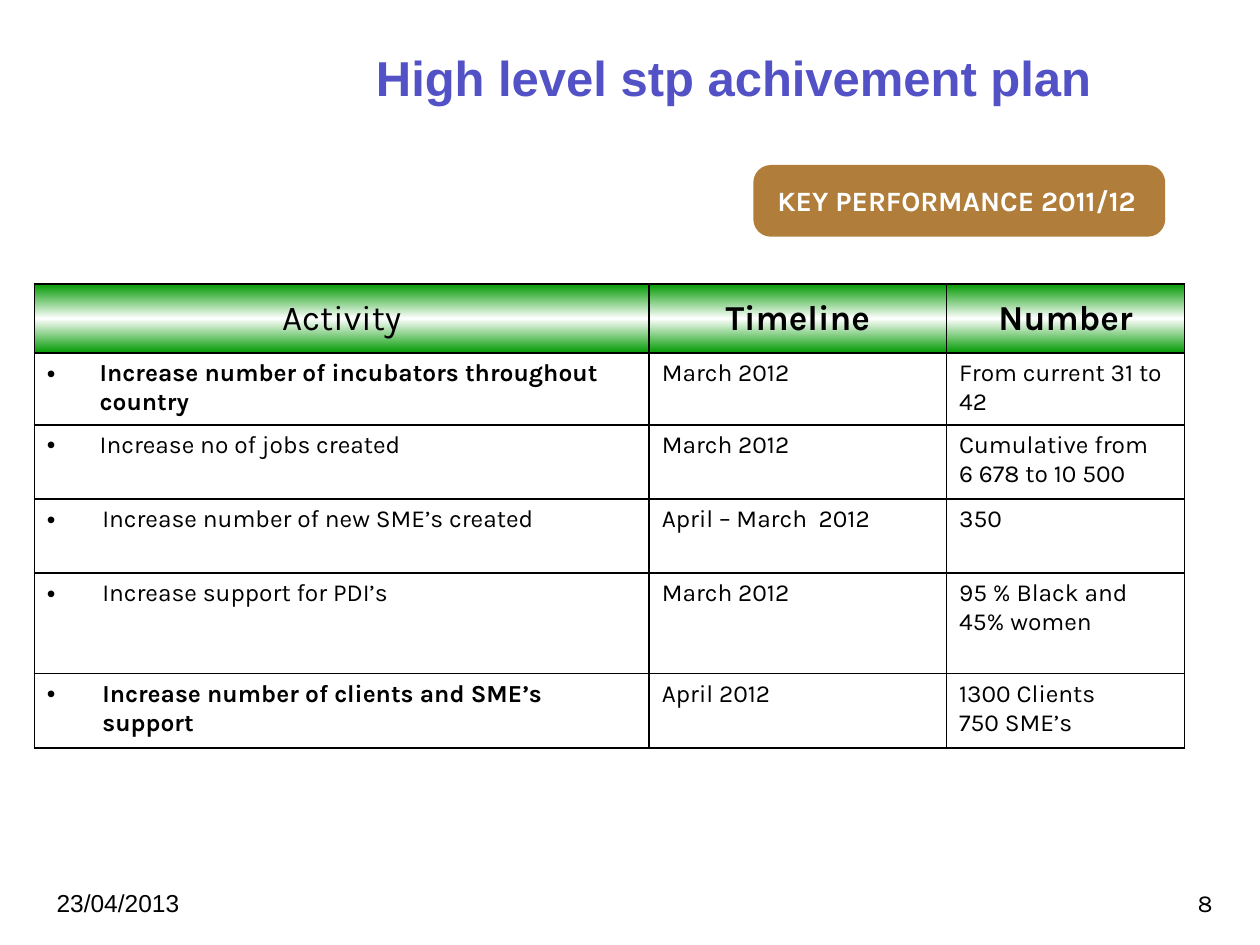
from copy import deepcopy
from pptx import Presentation
from pptx.dml import color
from pptx.enum import shapes, text
from pptx.oxml import parse_xml
from pptx.oxml.ns import nsdecls, qn
from pptx.util import Pt

LEFT, MID, RIGHT = text.PP_ALIGN.LEFT, text.PP_ALIGN.CENTER, text.PP_ALIGN.RIGHT
TOP, CENTRE = text.MSO_ANCHOR.TOP, text.MSO_ANCHOR.MIDDLE

HEADS = ["Activity", "Timeline", "Number"]
ROWS = [
    ("Increase number of incubators throughout country", "March 2012",
     "From current 31 to 42"),
    ("Increase no of jobs created", "March 2012",
     "Cumulative from\v6 678 to 10 500"),
    ("Increase number of new SME’s created", "April – March  2012", "350"),
    ("Increase support for PDI’s", "March 2012",
     "95 % Black and\n45% women"),
    ("Increase number of clients and SME’s support", "April 2012",
     "1300 Clients\n750 SME’s"),
]
KEY = (0, 4)  # rows whose activity is bold
WIDTHS = [351.4, 169.9, 136.1]
HEIGHTS = [39.6, 41, 42.3, 42.3, 57.6, 42.5]


def rgb(code):
    return color.RGBColor.from_string(code)


def write(frame, words, size=14, face="Karla", ink="000000", bold=False,
          align=LEFT, hang=0):
    """Fill a text frame, one paragraph a line; hang gives a bullet."""
    frame.text = words
    frame.word_wrap = True
    for para in frame.paragraphs:
        para.alignment = align
        if hang:
            props = para._p.get_or_add_pPr()
            props.set("marL", str(Pt(hang)))
            props.set("indent", str(-Pt(hang)))
            props.append(parse_xml(f'<a:buFont {nsdecls("a")} typeface="Arial"/>'))
            props.append(parse_xml(f'<a:buChar {nsdecls("a")} char="•"/>'))
        for run in para.runs:
            font = run.font
            font.name, font.size, font.bold = face, Pt(size), bold
            font.color.rgb = rgb(ink)


def label(slide, box, words, inset=(7.2, 3.6), anchor=TOP, **form):
    """Add a text box whose inset is its left and top margin."""
    frame = slide.shapes.add_textbox(*map(Pt, box)).text_frame
    frame.margin_left, frame.margin_top = map(Pt, inset)
    frame.vertical_anchor = anchor
    write(frame, words, **form)


def badge(slide, box):
    """Put the title placeholder on a rounded plate."""
    plate = slide.shapes.add_shape(
        shapes.MSO_SHAPE.ROUNDED_RECTANGLE, *map(Pt, box))
    plate.adjustments[0] = 0.245
    plate.shadow.inherit = False
    plate.fill.solid()
    plate.fill.fore_color.rgb = rgb("B07D3A")
    plate.line.fill.background()
    title = slide.shapes.title
    x, y, w, h = box
    title.left, title.top, title.width, title.height = map(
        Pt, (x - 3, y, w + 3, h - 1))
    write(title.text_frame, "KEY PERFORMANCE 2011/12", size=16,
          ink="FFFFFF", bold=True, align=MID)
    title.text_frame.vertical_anchor = CENTRE
    slide.shapes._spTree.append(title._element)  # in front of the plate


def shade(cell):
    """Green to white to green, from top to bottom."""
    cell.fill.gradient()
    cell.fill.gradient_angle = 90
    stops = cell._tc.tcPr.find(".//" + qn("a:gsLst"))
    stops.insert(1, deepcopy(stops[0]))
    for stop, spot, code in zip(cell.fill.gradient_stops, (0, 0.5, 1),
                                ("009900", "FFFFFF", "009900")):
        stop.position = spot
        stop.color.rgb = rgb(code)


def border(cell):
    props = cell._tc.get_or_add_tcPr()
    for i, side in enumerate("LRTB"):
        props.insert(i, parse_xml(
            f'<a:ln{side} {nsdecls("a")} w="{Pt(1)}"><a:solidFill>'
            f'<a:srgbClr val="000000"/></a:solidFill></a:ln{side}>'))


def plan(slide, x, y):
    """Table of activities with its top left corner at x, y."""
    grid = slide.shapes.add_table(
        len(HEIGHTS), len(WIDTHS), Pt(x), Pt(y),
        Pt(sum(WIDTHS)), Pt(sum(HEIGHTS))).table
    for col, width in zip(grid.columns, WIDTHS):
        col.width = Pt(width)
    for row, height in zip(grid.rows, HEIGHTS):
        row.height = Pt(height)
    for c, head in enumerate(HEADS):
        cell = grid.cell(0, c)
        cell.vertical_anchor = CENTRE
        write(cell.text_frame, head, size=20, bold=c > 0, align=MID)
        shade(cell)
        border(cell)
    for r, row in enumerate(ROWS):
        for c, words in enumerate(row):
            cell = grid.cell(r + 1, c)
            first = c == 0
            hang = (30.2 if r < 2 else 31.7) if first else 0
            write(cell.text_frame, words, bold=first and r in KEY, hang=hang)
            if first:
                cell.fill.solid()
                cell.fill.fore_color.rgb = rgb("FFFFFF")
            else:
                cell.fill.background()
            border(cell)


def foot(slide, y):
    label(slide, (25.2, y, 168, 26.6), "23/04/2013", anchor=CENTRE,
          face="Arial")
    label(slide, (532, y, 168, 26.6), "8", anchor=CENTRE, align=RIGHT)


def main():
    deck = Presentation()
    deck.slide_width, deck.slide_height = Pt(720), Pt(540)
    slide = deck.slides.add_slide(deck.slide_layouts[5])
    foot(slide, 502.6)
    label(slide, (184.3, 20.2, 504.7, 41), "High level stp achivement plan",
          inset=(30.5, 7.2), size=28, face="Arial", ink="5252C6", bold=True)
    plan(slide, 19.6, 162.2)
    badge(slide, (430.5, 94.3, 235.4, 41))
    deck.save("out.pptx")


if __name__ == "__main__":
    main()
